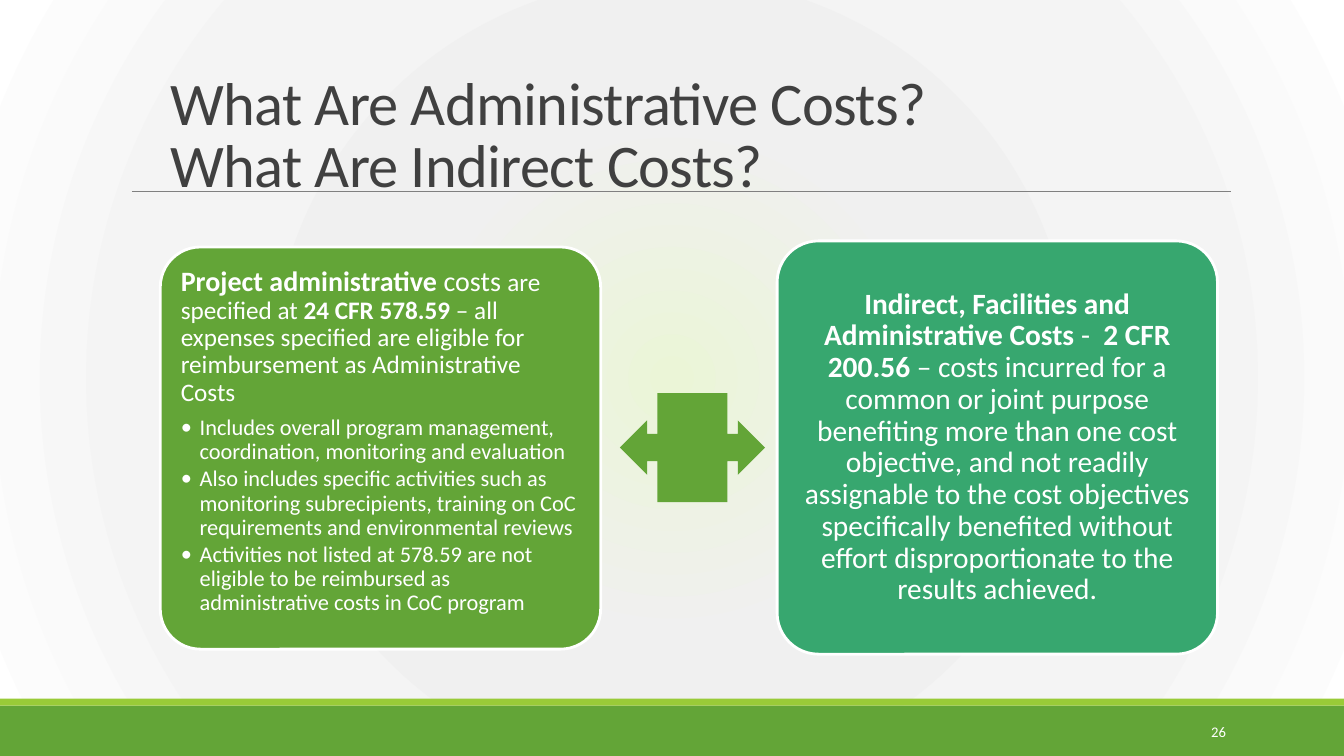
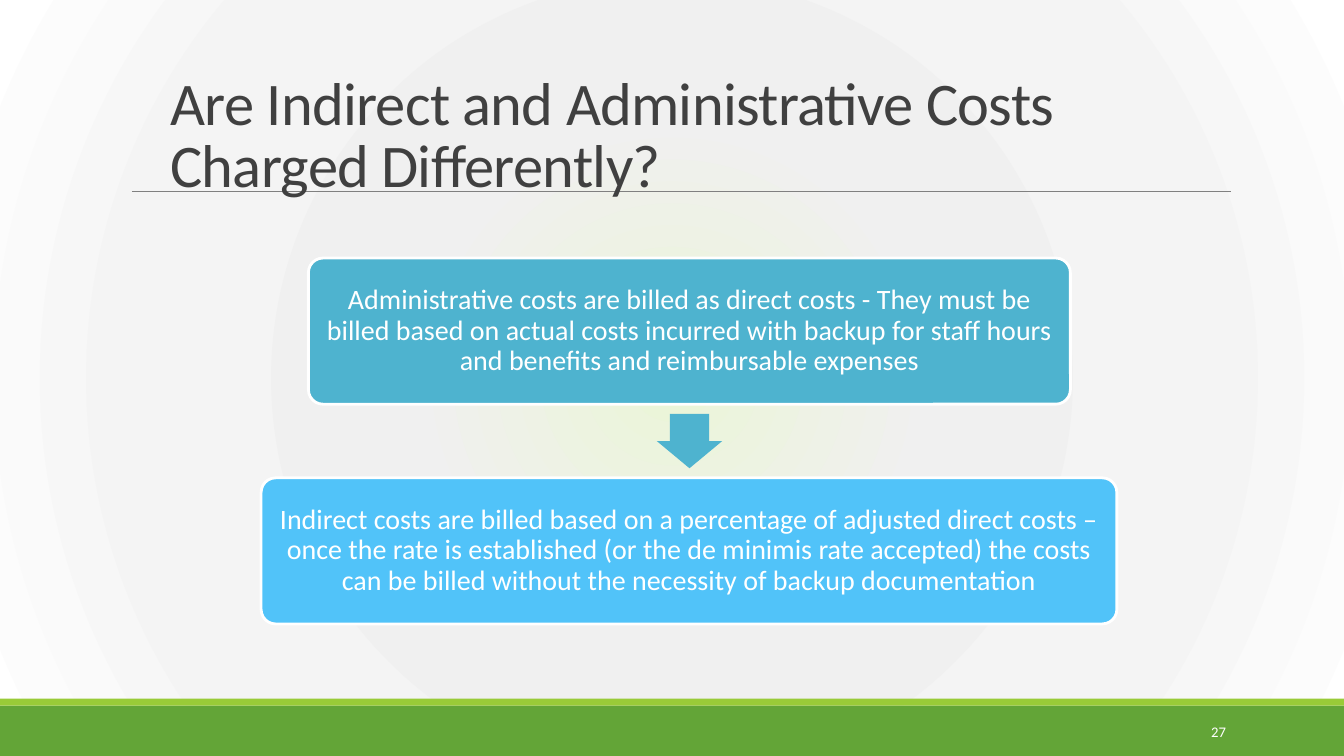
from lxml.etree import SubElement as Sub, fromstring
from pptx import Presentation
from pptx.dml.color import RGBColor as RGB
from pptx.enum.shapes import MSO_CONNECTOR as LINK, MSO_SHAPE as KIND
from pptx.enum.text import MSO_ANCHOR as ANCHOR, MSO_AUTO_SIZE as FIT, PP_ALIGN as ALIGN
from pptx.oxml.ns import qn
from pptx.util import Pt

HUE = {
    "green": "63A537", "lime": "99CB38", "jade": "37A76F", "teal": "4EB3CF",
    "sky": "51C3F9", "white": "FFFFFF", "dark": "404040", "gray": "808080",
}
GLOW = [(0, "EBF5D7"), (34, "F0F0F0"), (70, "F4F4F4"), (100, "FFFFFF")]
FRAME = {"word_wrap": True, "auto_size": FIT.NONE}


def write(frame, paras, fmt, look, color="white"):
    for key, val in {**FRAME, **fmt}.items():
        setattr(frame, key, val)
    for num, runs in enumerate(paras):
        para = frame.add_paragraph() if num else frame.paragraphs[0]
        for key, val in look.items():
            setattr(para, key, val)
        for text, size, bold in runs:
            for row, line in enumerate(text.split("\n")):
                if row:
                    para.add_line_break()
                run = para.add_run()
                run.text = line
                style = {"name": "Calibri", "size": Pt(size), "bold": bold}
                for key, val in style.items():
                    setattr(run.font, key, val)
                run.font.color.rgb = RGB.from_string(HUE[color])


def draw(slide, kind, place, color, edge=False, adj=()):
    shape = slide.shapes.add_shape(kind, *map(Pt, place))
    shape.shadow.inherit = False
    shape.fill.solid()
    shape.fill.fore_color.rgb = RGB.from_string(HUE[color])
    if edge:
        shape.line.color.rgb = RGB.from_string(HUE["white"])
        shape.line.width = Pt(2)
    else:
        shape.line.fill.background()
    for num, val in enumerate(adj):
        shape.adjustments[num] = val
    return shape


deck = Presentation()
deck.slide_width, deck.slide_height = Pt(960), Pt(540)
base = deck.slide_layouts[5]
for holder in list(base.placeholders):
    if holder.placeholder_format.idx:
        holder.element.getparent().remove(holder.element)

titles = [
    "What Are Administrative Costs?\nWhat Are Indirect Costs?",
    "Are Indirect and Administrative Costs Charged Differently?",
]
slides = [deck.slides.add_slide(base) for title in titles]
first, second = slides

base.background.fill.solid()
solid = base.element.find(".//" + qn("a:solidFill"))
stops = "".join(
    f'<a:gs pos="{pos * 1000}"><a:srgbClr val="{color}"/></a:gs>' for pos, color in GLOW
)
solid.getparent().replace(solid, fromstring(
    '<a:gradFill xmlns:a="http://schemas.openxmlformats.org/drawingml/2006/main" rotWithShape="1">'
    f'<a:gsLst>{stops}</a:gsLst><a:path path="circle">'
    '<a:fillToRect l="100000" t="100000" r="100000" b="100000"/></a:path></a:gradFill>'
))

rule = first.shapes.add_connector(LINK.STRAIGHT, Pt(94.3), Pt(136.8), Pt(879.1), Pt(136.8))
rule.line.color.rgb = RGB.from_string(HUE["gray"])
rule.line.width = Pt(0.5)
Sub(rule.element.spPr, qn("a:effectLst"))
bands = [
    draw(first, KIND.RECTANGLE, (0, 504, 960, 36), "green"),
    draw(first, KIND.RECTANGLE, (0, 499, 960, 5), "lime"),
]
for num, part in enumerate([*bands, rule], 20):
    part.element.xpath(".//p:cNvPr")[0].set("id", str(num))
    base.shapes.element.append(part.element)

for num, (slide, title) in enumerate(zip(slides, titles), 26):
    head = slide.shapes.title
    place = {"left": 114.5, "top": 63.4, "width": 756, "height": 82.8}
    for key, val in place.items():
        setattr(head, key, Pt(val))
    write(head.text_frame, [[(title, 43.2, False)]], {"vertical_anchor": ANCHOR.BOTTOM},
          {"alignment": ALIGN.LEFT, "line_spacing": 0.85}, "dark")
    for run in head.text_frame.paragraphs[0].runs:
        run.font._element.set("spc", "-50")
    foot = slide.shapes.add_textbox(Pt(779.8), Pt(508.3), Pt(103), Pt(28.8))
    write(foot.text_frame, [[(str(num), 10.5, False)]], {"vertical_anchor": ANCHOR.MIDDLE},
          {"alignment": ALIGN.RIGHT})

project = [
    [
        ("Project administrative ", 20, True),
        ("costs ", 20, False),
        ("are specified at ", 18, False),
        ("24 CFR 578.59 ", 18, True),
        ("– all expenses specified are eligible for reimbursement as Administrative Costs", 18, False),
    ],
    [("Includes overall program management, coordination, monitoring and evaluation", 16, False)],
    [("Also includes specific activities such as monitoring subrecipients, training on CoC "
      "requirements and environmental reviews", 16, False)],
    [("Activities not listed at 578.59 are not eligible to be reimbursed as administrative "
      "costs in CoC program", 16, False)],
]
shared = [[
    ("Indirect, Facilities and Administrative Costs ", 21, True),
    ("-  ", 21, False),
    ("2 CFR 200.56", 21, True),
    (" – costs incurred for a common or joint purpose benefiting more than one cost objective, "
     "and not readily assignable to the cost objectives specifically benefited without effort "
     "disproportionate to the results achieved.", 21, False),
]]
direct = [[("Administrative costs are billed as direct costs - They must be billed based on actual "
            "costs incurred with backup for staff hours and benefits and reimbursable expenses",
            20, False)]]
rated = [[("Indirect costs are billed based on a percentage of adjusted direct costs – once the rate "
           "is established (or the de minimis rate accepted) the costs can be billed without the "
           "necessity of backup documentation", 20, False)]]

panels = [
    (first, (114.5, 176.4, 314.6, 287.3), "green", project, ANCHOR.TOP, ALIGN.LEFT, 6.3),
    (first, (555.1, 172.1, 314.6, 295.2), "jade", shared, ANCHOR.MIDDLE, ALIGN.CENTER, 6.3),
    (second, (220.3, 184.3, 544.3, 104.4), "teal", direct, ANCHOR.MIDDLE, ALIGN.CENTER, 6),
    (second, (186.5, 341.3, 611.3, 104.4), "sky", rated, ANCHOR.MIDDLE, ALIGN.CENTER, 6),
]
for slide, place, color, paras, anchor, align, inset in panels:
    panel = draw(slide, KIND.ROUNDED_RECTANGLE, place, color, True, [0.1])
    fmt = {f"margin_{side}": Pt(inset) for side in ("left", "top", "right", "bottom")}
    if align == ALIGN.LEFT:
        fmt["margin_right"] = Pt(8)
    write(panel.text_frame, paras, {**fmt, "vertical_anchor": anchor},
          {"alignment": align, "line_spacing": 0.9, "space_after": Pt(7)})
    for para in panel.text_frame.paragraphs[1:]:
        para.level, para.space_after = 1, Pt(2)
        props = para._p.get_or_add_pPr()
        props.set("marL", str(Pt(13.5)))
        props.set("indent", str(-Pt(13.5)))
        Sub(props, qn("a:buFont"), typeface="Calibri")
        Sub(props, qn("a:buChar"), char="•")

draw(first, KIND.LEFT_RIGHT_ARROW_CALLOUT, (442.8, 280.8, 103.7, 77.8), "green")
draw(second, KIND.DOWN_ARROW, (469.1, 295.6, 46.8, 38.9), "teal", adj=(0.6, 0.5))

deck.save("out.pptx")
